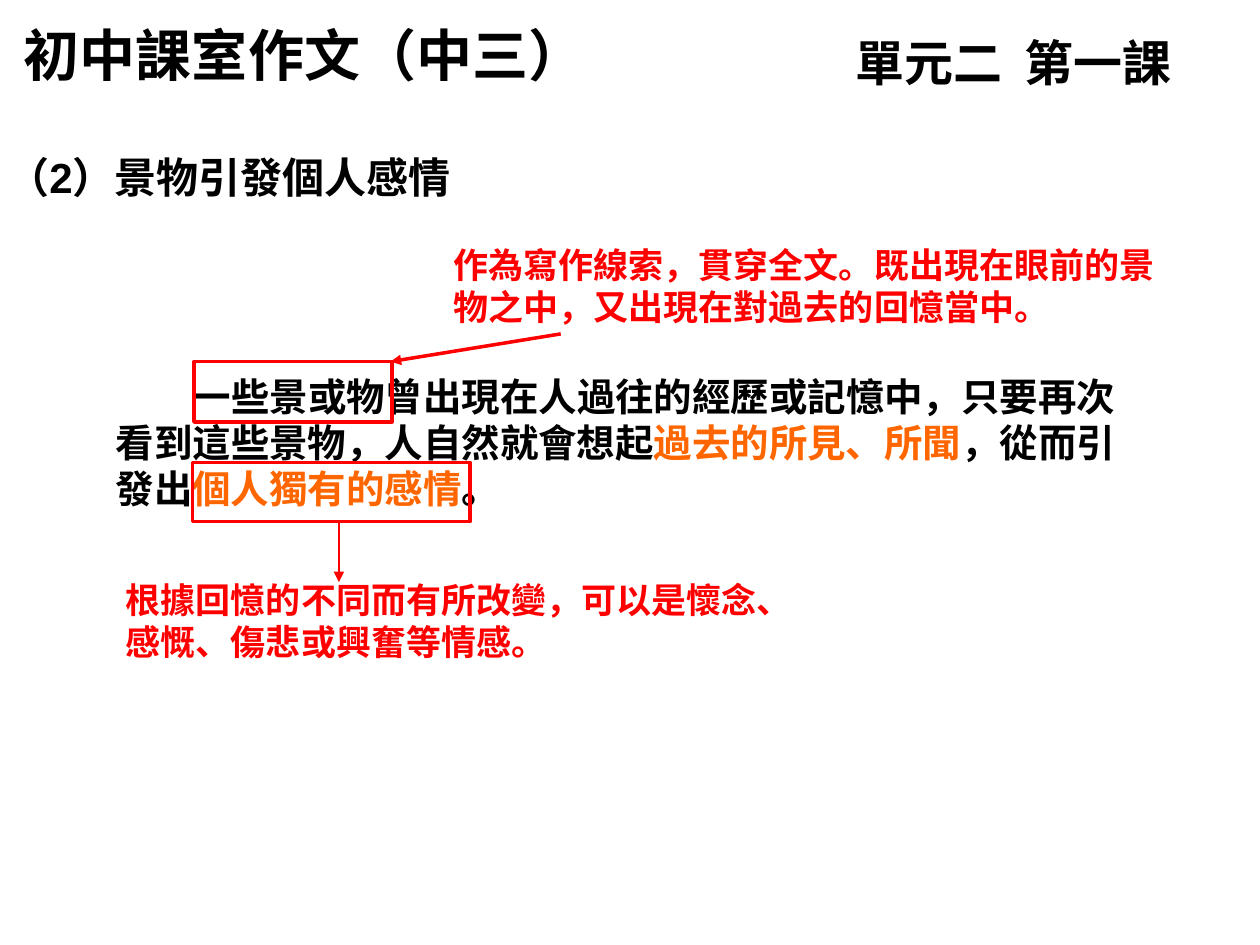
"""Build the lesson slide on scenes and objects that evoke personal feelings."""
from pptx import Presentation
from pptx.dml.color import RGBColor
from pptx.enum.shapes import MSO_CONNECTOR, MSO_SHAPE
from pptx.enum.text import MSO_ANCHOR, MSO_AUTO_SIZE, PP_ALIGN
from pptx.oxml.ns import qn
from pptx.util import Inches, Pt
from lxml.etree import SubElement

BLACK = RGBColor(0x00, 0x00, 0x00)
RED = RGBColor(0xFF, 0x00, 0x00)
ORANGE = RGBColor(0xFF, 0x66, 0x00)


def add_text(p, text, size=20, font="Arial", color=BLACK):
    for i, line in enumerate(text.split("\n")):
        if i:
            p.add_line_break()
        r = p.add_run()
        r.text = line
        r.font.size = Pt(size)
        r.font.name = font
        r.font.bold = True
        r.font.color.rgb = color


prs = Presentation()
prs.slide_width, prs.slide_height = Inches(10), Inches(7.5)
s = prs.slides.add_slide(prs.slide_layouts[5])

title = s.shapes.title
title.left, title.top = Inches(0.09), Inches(0.11)
title.width, title.height = Inches(5.22), Inches(0.63)
tf = title.text_frame
tf.auto_size = MSO_AUTO_SIZE.NONE
tf.vertical_anchor = MSO_ANCHOR.TOP
tf.paragraphs[0].alignment = PP_ALIGN.LEFT
add_text(tf.paragraphs[0], "初中課室作文（中三）", size=32, font="Lato")

passage = s.shapes.add_textbox(Inches(0.82), Inches(2.96), Inches(8.19), Inches(1.1))
tf = passage.text_frame
tf.word_wrap = False
tf.vertical_anchor = MSO_ANCHOR.MIDDLE
p = tf.paragraphs[0]
p._p.get_or_add_pPr().set("indent", str(Pt(44)))
for text, color in [
    ("一些景或物曾出現在人過往的經歷或記憶中，只要再次\n看到這些景物，人自然就會想起", BLACK),
    ("過去的所見、所聞", ORANGE),
    ("，從而引\n發出", BLACK),
    ("個人獨有的感情", ORANGE),
    ("。", BLACK),
]:
    add_text(p, text, size=22, color=color)

for x, y, w, h, text, style in [
    (6.69, 0.21, 3.35, 0.57, "單元二  第一課", {"size": 28, "font": "Lato"}),
    (0.9, 4.54, 5.43, 0.77, "根據回憶的不同而有所改變，可以是懷念、感慨、傷悲或興奮等情感。", {"color": RED}),
    (3.5, 1.88, 5.83, 0.77,
     "作為寫作線索，貫穿全文。既出現在眼前的景物之中，又出現在對過去的回憶當中。", {"color": RED}),
    (-0.04, 1.15, 4.17, 0.5, "（2）景物引發個人感情", {"size": 24}),
]:
    box = s.shapes.add_textbox(Inches(x), Inches(y), Inches(w), Inches(h))
    tf = box.text_frame
    tf.word_wrap = True
    tf.auto_size = MSO_AUTO_SIZE.SHAPE_TO_FIT_TEXT
    add_text(tf.paragraphs[0], text, **style)

for x, y, w, h in [(1.54, 2.87, 1.57, 0.48), (1.53, 3.67, 2.2, 0.47)]:
    frame = s.shapes.add_shape(MSO_SHAPE.RECTANGLE, Inches(x), Inches(y), Inches(w), Inches(h))
    frame.shadow.inherit = False
    frame.fill.background()
    frame.line.color.rgb = RED
    frame.line.width = Pt(2)

for x1, y1, x2, y2, width in [(4.45, 2.65, 3.1, 2.87, 2), (2.69, 4.14, 2.69, 4.62, 1.5)]:
    arrow = s.shapes.add_connector(
        MSO_CONNECTOR.STRAIGHT, Inches(x1), Inches(y1), Inches(x2), Inches(y2))
    arrow.line.color.rgb = RED
    arrow.line.width = Pt(width)
    SubElement(arrow.line._get_or_add_ln(), qn("a:tailEnd"), type="triangle")
    SubElement(arrow._element.spPr, qn("a:effectLst"))

prs.save("out.pptx")
